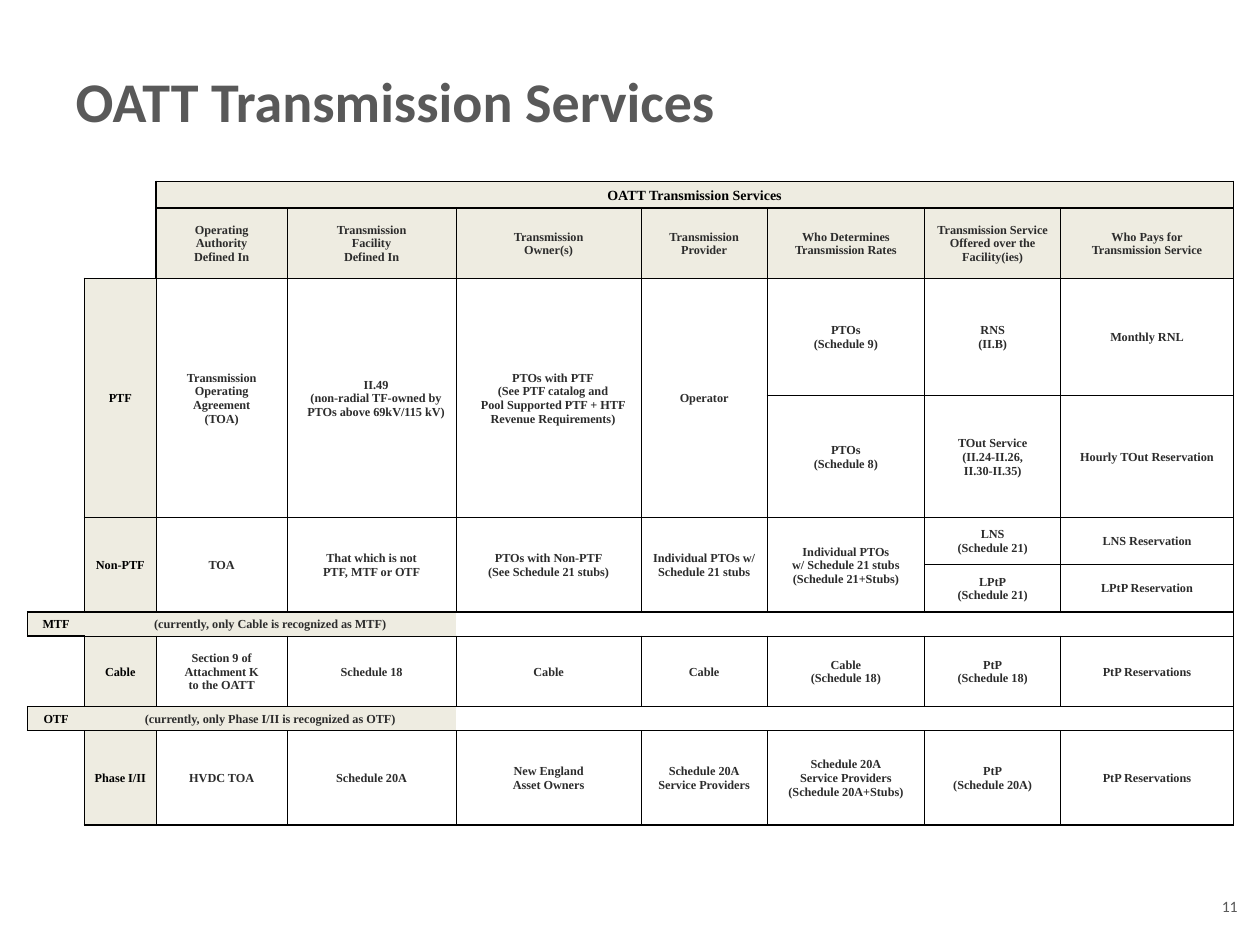
from dataclasses import dataclass

from lxml import etree
from pptx import Presentation
from pptx.dml.color import RGBColor
from pptx.enum.text import MSO_ANCHOR, PP_ALIGN
from pptx.oxml.ns import qn
from pptx.util import Emu, Inches, Pt

CENTER, LEFT = PP_ALIGN.CENTER, PP_ALIGN.LEFT
MIDDLE = MSO_ANCHOR.MIDDLE
GREY, INK, BLACK, SHADE = "595959", "2C2C2C", "000000", "EEECE1"
SERIF, SANS = "Times New Roman", "Calibri"
NO_STYLE = "{2D5ABB26-0587-4C30-8999-92F81FD0307C}"
THICK, THIN = 1, 0.5

COL_WIDTHS = [0.22, 0.45, 0.57, 1.04, 1.34, 1.2, 0.27, 0.83,
              0.17, 1.25, 0.1, 0.98, 0.17, 1.2, 0.22]
ROW_HEIGHTS = [0.19, 0.21, 0.56, 0.93, 0.97, 0.37,
               0.38, 0.19, 0.56, 0.19, 0.75, 0.19]
# First grid column and span of each printed column, row label first
FIELDS = [(2, 1), (3, 1), (4, 1), (5, 2), (7, 2), (9, 1), (10, 2), (12, 2)]
LAST_COL = 13
# Each side: its border tag, the neighbour's offset and the neighbour's side
SIDES = {"l": ("a:lnL", 0, -1, "r"), "r": ("a:lnR", 0, 1, "l"),
         "t": ("a:lnT", -1, 0, "b"), "b": ("a:lnB", 1, 0, "t")}


@dataclass
class Service:
    """A table row; sub_texts split its last columns into a second row."""
    row: int
    texts: list[str]
    sub_texts: tuple[str, ...] = ()
    top: float = THICK


@dataclass
class Band:
    row: int
    label: str
    note: str


# "|" separates paragraphs, a newline breaks a line inside one
HEADER = Service(2, [
    "", "Operating|Authority|Defined In", "Transmission|Facility|Defined In",
    "Transmission|Owner(s)", "Transmission|Provider",
    "Who Determines|Transmission Rates",
    "Transmission Service Offered over the Facility(ies)",
    "Who Pays for|Transmission Service"])
SERVICES = [
    Service(3, ["PTF", "Transmission|Operating|Agreement|(TOA)",
                "II.49\n(non-radial TF-owned by PTOs above 69kV/115 kV)",
                "PTOs with PTF\n(See PTF catalog and|"
                "Pool Supported PTF + HTF Revenue Requirements)",
                "Operator", "PTOs\n(Schedule 9)", "RNS\n(II.B)", "Monthly RNL"],
            ("PTOs\n(Schedule 8)", "TOut Service\n(II.24-II.26,\nII.30-II.35)",
             "Hourly TOut Reservation")),
    Service(5, ["Non-PTF", "TOA", "That which is not|PTF, MTF or OTF",
                "PTOs with Non-PTF\n(See Schedule 21 stubs)",
                "Individual PTOs w/ Schedule 21 stubs",
                "Individual PTOs|w/ Schedule 21 stubs\n(Schedule 21+Stubs)",
                "LNS\n(Schedule 21)", "LNS Reservation"],
            ("LPtP\n(Schedule 21)", "LPtP Reservation")),
    Service(8, ["Cable", "Section 9 of|Attachment K|to the OATT", "Schedule 18",
                "Cable", "Cable", "Cable\n(Schedule 18)", "PtP\n(Schedule 18)",
                "PtP Reservations"], top=THIN),
    Service(10, ["Phase I/II", "HVDC TOA", "Schedule 20A",
                 "New England|Asset Owners", "Schedule 20A|Service Providers",
                 "Schedule 20A|Service Providers\n(Schedule 20A+Stubs)",
                 "PtP\n(Schedule 20A)", "PtP Reservations"], top=THIN),
]
BANDS = [Band(7, "MTF", "(currently, only Cable is recognized as MTF)"),
         Band(9, "OTF", "(currently, only Phase I/II is recognized as OTF)")]


def rgb(color: str) -> RGBColor:
    return RGBColor.from_string(color)


def add_run(p, text: str, size: float, font: str, color: str,
            bold: bool = False) -> None:
    r = p.add_run()
    r.text = text
    r.font.size, r.font.name, r.font.bold = Pt(size), font, bold
    r.font.color.rgb = rgb(color)


def merge(table, row: int, col: int, rows: int, cols: int) -> None:
    if rows * cols > 1:
        table.cell(row, col).merge(table.cell(row + rows - 1, col + cols - 1))


def put(table, edges: dict, row: int, col: int, text: str, rows: int = 1,
        cols: int = 1, size: float = 7, color: str = INK, fill: str = "",
        indent: float = 0, **borders: float) -> None:
    """Fill a cell and note its borders on both sides of each edge."""
    merge(table, row, col, rows, cols)
    cell = table.cell(row, col)
    for i, paragraph in enumerate(text.split("|") if text else []):
        tf = cell.text_frame
        p = tf.add_paragraph() if i else tf.paragraphs[0]
        p.alignment = CENTER
        if indent:
            p._p.get_or_add_pPr().set("marL", str(Inches(indent)))
        for j, line in enumerate(paragraph.split("\n")):
            if j:
                p.add_line_break()
            add_run(p, line, size, SERIF, color, True)
    for r in range(row, row + rows):
        for c in range(col, col + cols):
            if fill:
                table.cell(r, c).fill.solid()
                table.cell(r, c).fill.fore_color.rgb = rgb(fill)
            on_edge = {"l": c == col, "r": c == col + cols - 1,
                       "t": r == row, "b": r == row + rows - 1}
            for side, width in borders.items():
                if on_edge[side]:
                    _, dr, dc, opposite = SIDES[side]
                    edges[r, c, side] = edges[r + dr, c + dc, opposite] = width


def add_service(table, edges: dict, service: Service) -> None:
    split = len(FIELDS) - len(service.sub_texts)
    is_header = service is HEADER
    for i, (col, cols) in enumerate(FIELDS):
        if not service.texts[i]:
            continue
        outer = col == 2 or (is_header and col == 3)
        sides = {"l": THICK if outer else THIN,
                 "r": THICK if col + cols > LAST_COL else THIN}
        indent = 0.07 if service.row == 3 and col in (4, 5) else 0
        divided = i >= split
        put(table, edges, service.row, col, service.texts[i],
            rows=2 if service.sub_texts and not divided else 1, cols=cols,
            color=BLACK if col == 2 else INK, indent=indent,
            fill=SHADE if is_header or col == 2 else "",
            t=service.top, b=THIN if divided else THICK, **sides)
        if divided:
            put(table, edges, service.row + 1, col, service.sub_texts[i - split],
                cols=cols, t=THIN, b=THICK, **sides)


def add_band(table, edges: dict, band: Band) -> None:
    put(table, edges, band.row, 1, band.label, color=BLACK, fill=SHADE,
        l=THICK, t=THICK, b=THICK)
    put(table, edges, band.row, 2, band.note, cols=3, fill=SHADE,
        t=THICK, b=THIN)
    for col, cols in FIELDS[3:]:
        right = {"r": THICK} if col + cols > LAST_COL else {}
        put(table, edges, band.row, col, "", cols=cols, t=THICK, b=THIN, **right)


def draw_borders(table, edges: dict) -> None:
    for r in range(len(ROW_HEIGHTS)):
        for c in range(len(COL_WIDTHS)):
            tc_pr = table.cell(r, c)._tc.get_or_add_tcPr()
            for i, (side, (tag, *_)) in enumerate(SIDES.items()):
                width = edges.get((r, c, side), 0)
                ln = etree.Element(qn(tag), w=str(Pt(width)))
                if width:
                    fill = etree.SubElement(ln, qn("a:solidFill"))
                    etree.SubElement(fill, qn("a:srgbClr"), val=BLACK)
                else:
                    etree.SubElement(ln, qn("a:noFill"))
                tc_pr.insert(i, ln)


def add_services_table(s) -> None:
    frame = s.shapes.add_table(len(ROW_HEIGHTS), len(COL_WIDTHS), Inches(0),
                               Inches(1.25), Inches(10), Inches(5.49))
    table = frame.table
    table.first_row = table.horz_banding = False
    table._tbl.tblPr.find(qn("a:tableStyleId")).text = NO_STYLE
    for column, width in zip(table.columns, COL_WIDTHS):
        column.width = Inches(width)
    for row, height in zip(table.rows, ROW_HEIGHTS):
        row.height = Inches(height)
    for cell in table.iter_cells():
        cell.margin_left = cell.margin_right = cell.margin_top = Inches(0.01)
        cell.margin_bottom = Emu(0)
        cell.vertical_anchor = MIDDLE
        cell.fill.background()
        # Small end mark keeps blank rows at their height
        cell.text_frame.paragraphs[0]._p.get_or_add_endParaRPr().set("sz", "700")

    edges: dict = {}
    put(table, edges, 1, 3, "OATT Transmission Services", cols=11, size=8,
        color=BLACK, fill=SHADE, l=THICK, r=THICK, t=THICK, b=THICK)
    for service in [HEADER, *SERVICES]:
        add_service(table, edges, service)
    for band in BANDS:
        add_band(table, edges, band)
    # Blank cells around the grid
    for row, col, rows, cols in [(0, 6, 1, 2), (0, 8, 1, 3), (0, 11, 1, 2),
                                 (3, 1, 2, 1), (5, 1, 2, 1), (11, 5, 1, 2),
                                 (11, 7, 1, 2), (11, 10, 1, 2), (11, 12, 1, 2)]:
        merge(table, row, col, rows, cols)
    draw_borders(table, edges)


def main() -> None:
    prs = Presentation()
    prs.slide_width, prs.slide_height = Inches(10), Inches(7.5)
    s = prs.slides.add_slide(prs.slide_layouts[5])

    # Title
    title = s.shapes.title
    title.left, title.top = Inches(0.5), Inches(0.17)
    title.width, title.height = Inches(9), Inches(1.25)
    title.text_frame.vertical_anchor = MIDDLE
    p = title.text_frame.paragraphs[0]
    p.alignment = LEFT
    add_run(p, "OATT Transmission Services", 32, SANS, GREY, True)

    # Slide number
    tf = s.shapes.add_textbox(Inches(9.59), Inches(7.05), Inches(0.34),
                              Inches(0.29)).text_frame
    tf.margin_left = tf.margin_right = tf.margin_top = tf.margin_bottom = 0
    tf.word_wrap, tf.vertical_anchor = True, MIDDLE
    p = tf.paragraphs[0]
    p.alignment = CENTER
    add_run(p, "11", 9, SANS, GREY)

    add_services_table(s)
    prs.save("out.pptx")


if __name__ == "__main__":
    main()
